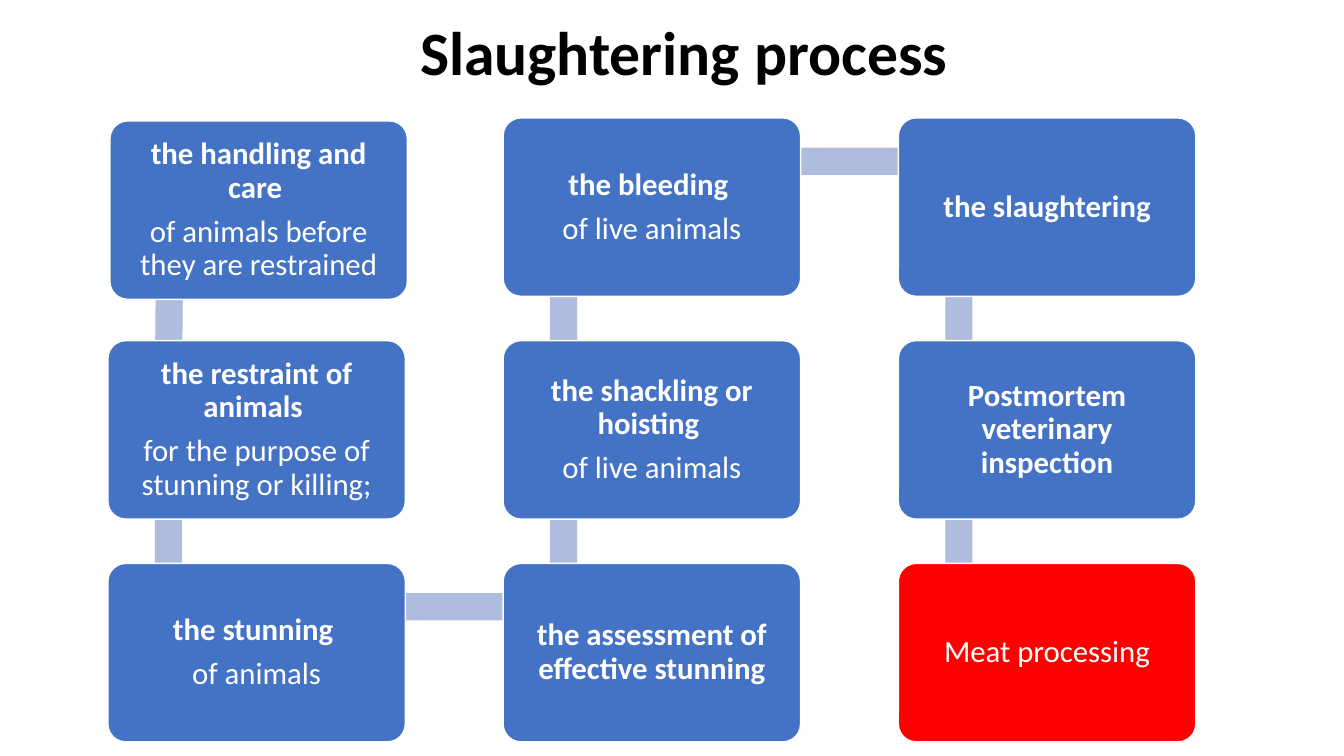
from math import atan2, degrees, hypot

from pptx import Presentation
from pptx.dml.color import RGBColor
from pptx.enum.shapes import MSO_SHAPE
from pptx.enum.text import MSO_ANCHOR, PP_ALIGN
from pptx.util import Pt

EMU_PER_PX = 9144
COLORS = {
    "title": "000000",
    "step": "4472C4",
    "final": "FF0000",
    "link": "B0BCDE",
    "white": "FFFFFF",
}
CARD_WIDTH, CARD_HEIGHT = 295, 177
COLUMN_PITCH, ROW_PITCH = 392, 221
LINK_WIDTH = 27
LINK_ANCHOR = (60, 43)

STEPS = [
    ("the handling and care ", "of animals before they are restrained"),
    ("the restraint of animals ", "for the purpose of stunning or killing;"),
    ("the stunning ", "of animals"),
    ("the assessment of effective stunning", ""),
    ("the shackling or hoisting ", "of live animals"),
    ("the bleeding ", "of live animals"),
    ("the slaughtering", ""),
    ("Postmortem veterinary inspection", ""),
    ("", "Meat processing"),
]


def px(length):
    return round(length * EMU_PER_PX)


def write(frame, lines, size, color, margin):
    frame.word_wrap = True
    frame.vertical_anchor = MSO_ANCHOR.MIDDLE
    frame.margin_left = frame.margin_right = px(margin)
    frame.margin_top = frame.margin_bottom = px(margin)
    for index, (wording, bold) in enumerate(lines):
        paragraph = frame.add_paragraph() if index else frame.paragraphs[0]
        paragraph.alignment = PP_ALIGN.CENTER
        paragraph.line_spacing = 0.9
        paragraph.space_after = Pt(7.7)
        run = paragraph.add_run()
        run.text = wording
        run.font.name = "Calibri"
        run.font.size = Pt(size)
        run.font.bold = bold
        run.font.color.rgb = RGBColor.from_string(COLORS[color])


def add_block(slide, kind, box, fill):
    block = slide.shapes.add_shape(kind, *map(px, box))
    block.shadow.inherit = False
    block.fill.solid()
    block.fill.fore_color.rgb = RGBColor.from_string(COLORS[fill])
    block.line.fill.background()
    return block


def add_title(slide, box):
    title = slide.shapes.add_textbox(*map(px, box))
    write(title.text_frame, [("Slaughtering process", True)], 44, "title", 10)


def add_link(slide, origin, target):
    dx, dy = target[0] - origin[0], target[1] - origin[1]
    length = hypot(dx, dy)
    left = (origin[0] + target[0] - length) / 2 + LINK_ANCHOR[0]
    top = (origin[1] + target[1] - LINK_WIDTH) / 2 + LINK_ANCHOR[1]
    link = add_block(slide, MSO_SHAPE.RECTANGLE, (left, top, length, LINK_WIDTH), "link")
    link.rotation = degrees(atan2(dy, dx)) % 360


def add_card(slide, corner, heading, detail, fill):
    box = (*corner, CARD_WIDTH, CARD_HEIGHT)
    card = add_block(slide, MSO_SHAPE.ROUNDED_RECTANGLE, box, fill)
    card.adjustments[0] = 0.1
    card.line.color.rgb = RGBColor.from_string(COLORS["white"])
    card.line.width = Pt(1)
    lines = [(wording, bold) for wording, bold in ((heading, True), (detail, False)) if wording]
    write(card.text_frame, lines, 22, "white", 14)


def add_process(slide, left, top):
    corners = []
    for index in range(len(STEPS)):
        column, row = divmod(index, 3)
        if column == 1:
            row = 2 - row
        corners.append((left + column * COLUMN_PITCH, top + row * ROW_PITCH))
    corners[0] = (left + 2, top + 3)
    last = len(STEPS) - 1
    for index, (heading, detail) in enumerate(STEPS):
        if index < last:
            add_link(slide, corners[index], corners[index + 1])
        fill = "final" if index == last else "step"
        add_card(slide, corners[index], heading, detail, fill)


def main():
    deck = Presentation()
    deck.slide_width, deck.slide_height = px(1333), px(750)
    slide = deck.slides.add_slide(deck.slide_layouts[6])
    add_title(slide, (101, -7, 1155, 124))
    add_process(slide, 107, 117)
    deck.save("out.pptx")


if __name__ == "__main__":
    main()
